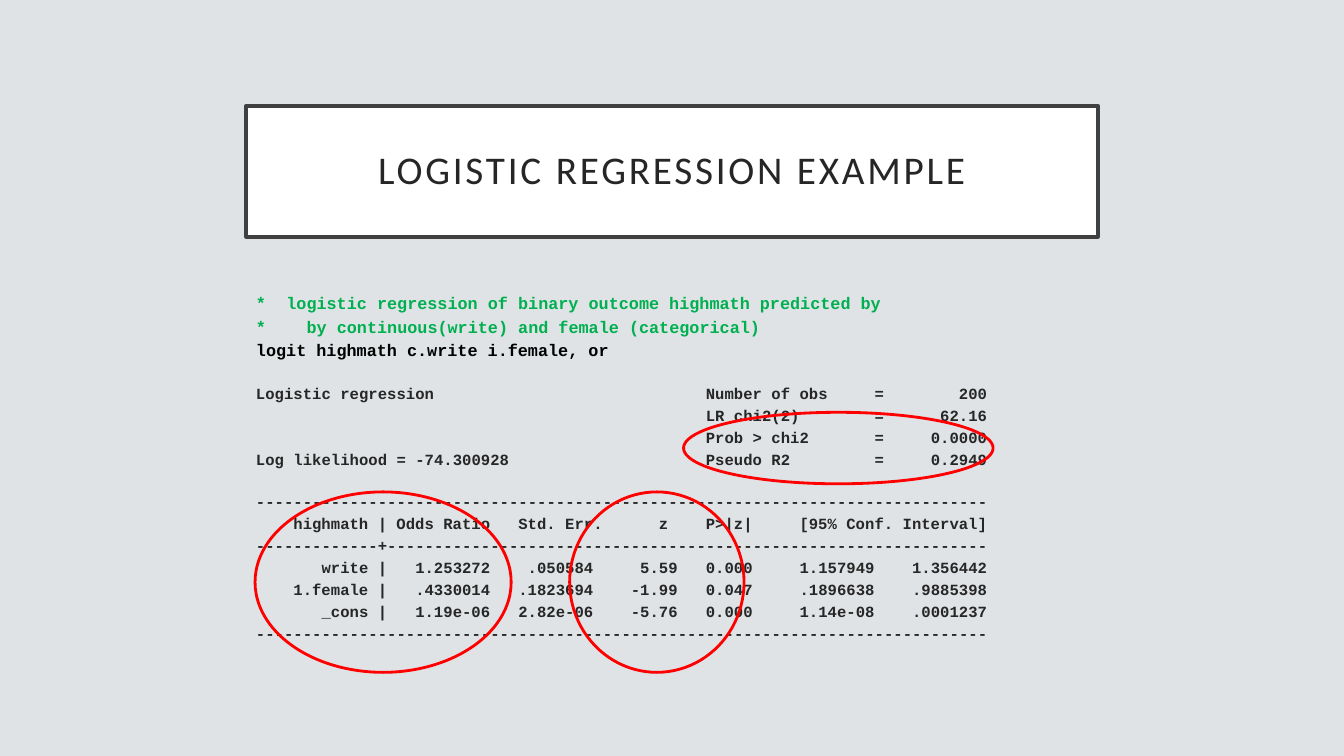
from dataclasses import dataclass

from lxml.etree import SubElement
from pptx import Presentation
from pptx.dml.color import RGBColor
from pptx.enum.shapes import MSO_SHAPE
from pptx.enum.text import MSO_ANCHOR, PP_ALIGN
from pptx.oxml.ns import qn
from pptx.util import Inches, Pt


@dataclass(frozen=True)
class Theme:
    back: str = "DFE3E5"
    panel: str = "FFFFFF"
    frame: str = "404040"
    ink: str = "262626"
    note: str = "00B050"
    code: str = "000000"
    mark: str = "FF0000"
    head: str = "Calibri"
    mono: str = "Courier New"
    title: float = 28
    large: float = 12
    small: float = 11.1
    lead: float = 0.9
    gap: float = 3.65
    skip: float = 18.6  # gap after one empty line


THEME = Theme()
WIDE, HIGH = 13.33, 7.5
LEFT, SPAN = 2.44, 8.45
CHARS = 78
TITLE = "LOGISTIC REGRESSION EXAMPLE"

# Tab stops are (character column, alignment)
STATS = [(48, "l"), (66, "l"), (CHARS, "r")]
HEADS = [(n, "r") for n in (14, 25, 37, 44, 53, CHARS)]
CELLS = [(n, "r") for n in (14, 25, 36, 45, 53, 66, CHARS)]
RULE = "-" * CHARS
CROSS = "-" * 13 + "+" + "-" * 64

COMMANDS = [
    (["*", "logistic regression of binary outcome highmath predicted by"],
     [(3, "l")], THEME.note),
    (["*", "by continuous(write) and female (categorical)"],
     [(5, "l")], THEME.note),
    (["logit highmath c.write i.female, or"], [], THEME.code),
]
SUMMARY = [
    ["Logistic regression", "Number of obs", "=", "200"],
    ["", "LR chi2(2)", "=", "62.16"],
    ["", "Prob > chi2", "=", "0.0000"],
    ["Log likelihood = -74.300928", "Pseudo R2", "=", "0.2949"],
]
HEADER = ["", "highmath |", "Odds Ratio", "Std. Err.", "z", "P>|z|",
          "[95% Conf. Interval]"]
RESULTS = [
    ["", "write |", "1.253272", ".050584", "5.59", "0.000",
     "1.157949", "1.356442"],
    ["", "1.female |", ".4330014", ".1823694", "-1.99", "0.047",
     ".1896638", ".9885398"],
    ["", "_cons |", "1.19e-06", "2.82e-06", "-5.76", "0.000",
     "1.14e-08", ".0001237"],
]
RINGS = [(2.53, 4.88, 2.54, 1.79), (5.65, 4.88, 1.73, 1.79),
         (6.78, 4.09, 3.07, 0.71)]


def color(code):
    return RGBColor.from_string(code)


def add_shape(slide, kind, box, line, width, fill=None):
    shape = slide.shapes.add_shape(kind, *map(Inches, box))
    shape.shadow.inherit = False
    if fill:
        shape.fill.solid()
        shape.fill.fore_color.rgb = color(fill)
    else:
        shape.fill.background()
    shape.line.color.rgb = color(line)
    shape.line.width = Pt(width)
    return shape


def set_font(font, name, size, ink, bold=False):
    font.name, font.size, font.bold = name, Pt(size), bold
    font.color.rgb = color(ink)


def add_title(slide):
    panel = add_shape(slide, MSO_SHAPE.RECTANGLE, (LEFT, 1.05, SPAN, 1.3),
                      THEME.frame, 2.5, THEME.panel)
    frame = panel.text_frame
    frame.word_wrap = True
    frame.vertical_anchor = MSO_ANCHOR.MIDDLE
    frame.margin_left = frame.margin_right = Inches(0.2)
    frame.margin_top = frame.margin_bottom = Inches(0.2)
    para = frame.paragraphs[0]
    para.alignment, para.line_spacing = PP_ALIGN.CENTER, THEME.lead
    run = para.add_run()
    run.text = TITLE
    set_font(para.font, THEME.head, THEME.title, THEME.ink)
    run.font._element.set("spc", "200")


def set_tabs(para, stops, size):
    """Place stops by character column; a mono character is 0.6 em wide."""
    tabs = SubElement(para._p.get_or_add_pPr(), qn("a:tabLst"))
    for column, side in stops:
        SubElement(tabs, qn("a:tab"), pos=str(Pt(column * size * 0.603)),
                   algn=side)


def add_log(slide):
    box = slide.shapes.add_textbox(*map(Inches, (LEFT, 2.88, SPAN, 3.62)))
    frame = box.text_frame
    frame.word_wrap = True
    lines = [(*row, THEME.large, False) for row in COMMANDS]
    report = [(row, STATS) for row in SUMMARY]
    report += [([RULE], []), (HEADER, HEADS), ([CROSS], [])]
    report += [(row, CELLS) for row in RESULTS] + [([RULE], [])]
    starts = (0, len(SUMMARY))
    lines += [(*row, THEME.ink, THEME.small, i in starts)
              for i, row in enumerate(report)]
    for i, (parts, stops, ink, size, apart) in enumerate(lines):
        para = frame.add_paragraph() if i else frame.paragraphs[0]
        if stops:
            set_tabs(para, stops, size)
        para.line_spacing = THEME.lead
        para.space_before = Pt(THEME.skip if apart else THEME.gap)
        para.add_run().text = "\t".join(parts)
        set_font(para.font, THEME.mono, size, ink, True)


def main():
    deck = Presentation()
    deck.slide_width, deck.slide_height = Inches(WIDE), Inches(HIGH)
    slide = deck.slides.add_slide(deck.slide_layouts[6])
    slide.background.fill.solid()
    slide.background.fill.fore_color.rgb = color(THEME.back)
    add_title(slide)
    add_log(slide)
    for ring in RINGS:
        add_shape(slide, MSO_SHAPE.OVAL, ring, THEME.mark, 2)
    deck.save("out.pptx")


if __name__ == "__main__":
    main()
